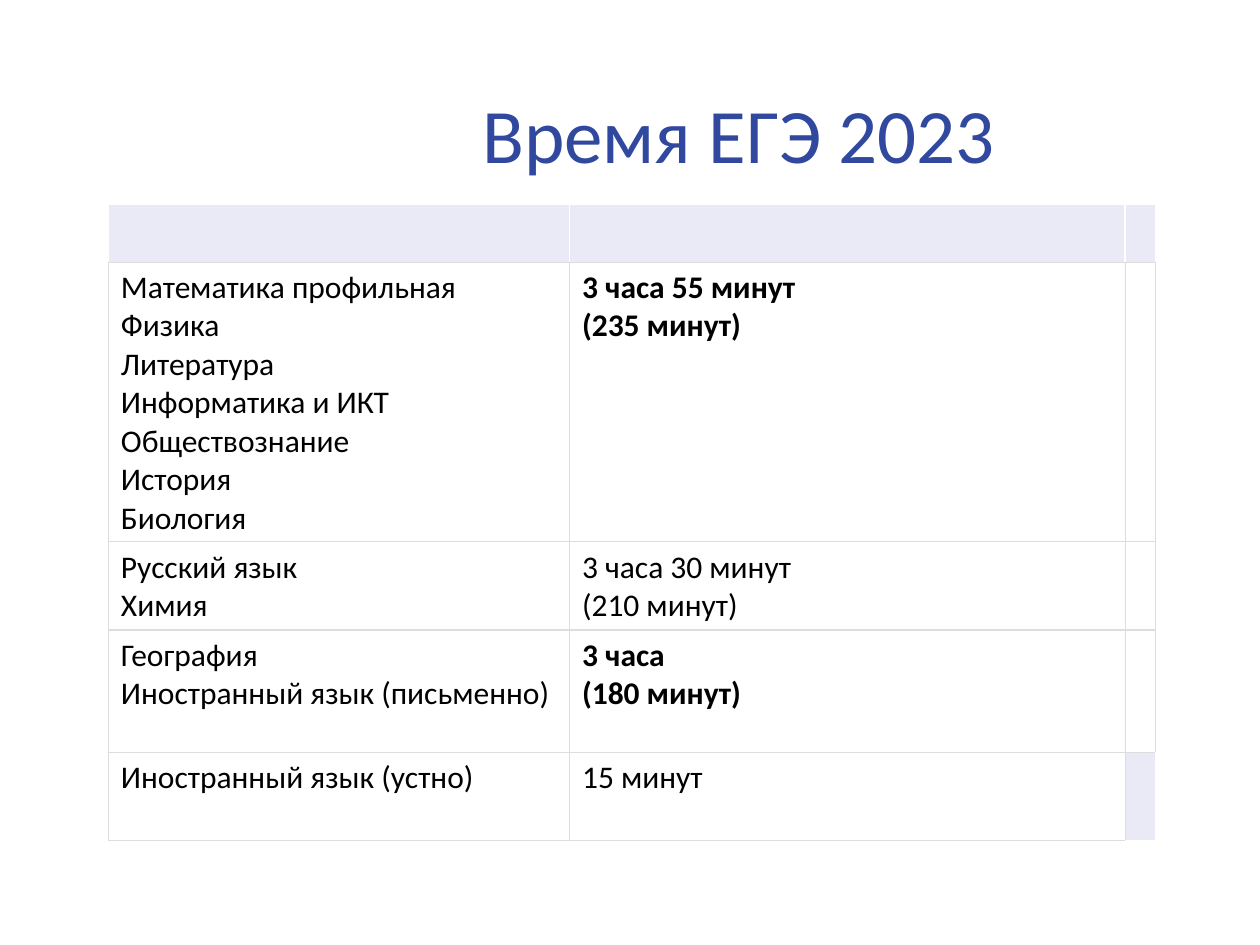
"""Build the slide with the exam durations table."""
from dataclasses import dataclass

from lxml import etree
from pptx import Presentation
from pptx.dml.color import RGBColor
from pptx.enum.text import MSO_ANCHOR, PP_ALIGN
from pptx.oxml.ns import qn
from pptx.util import Inches, Pt

MIDDLE, TOP = MSO_ANCHOR.MIDDLE, MSO_ANCHOR.TOP
CENTER, LEFT = PP_ALIGN.CENTER, PP_ALIGN.LEFT


@dataclass(frozen=True)
class Theme:
    font: str = "Calibri"
    title: str = "31489F"
    ink: str = "000000"
    paper: str = "FFFFFF"
    band: str = "E9EAF5"
    rule: str = "DDDDDD"
    title_size: int = 44
    body_size: int = 18
    rule_width: float = 0.75
    band_width: float = 0.96


THEME = Theme()


def write(frame, text, size=THEME.body_size, color=THEME.ink, bold=False, align=LEFT, anchor=TOP):
    frame.word_wrap = True
    frame.vertical_anchor = anchor
    paragraph = frame.paragraphs[0]
    paragraph.text = text.replace("\n", "\v")
    paragraph.alignment = align
    for run in paragraph.runs:
        run.font.name = THEME.font
        run.font.size = Pt(size)
        run.font.bold = bold
        run.font.color.rgb = RGBColor.from_string(color)


def style_cell(cell, fill, white_sides):
    properties = cell._tc.get_or_add_tcPr()
    for side in "LRTB":
        white = side in white_sides
        width = THEME.band_width if white else THEME.rule_width
        border = etree.SubElement(properties, qn(f"a:ln{side}"), w=str(Pt(width)))
        solid = etree.SubElement(border, qn("a:solidFill"))
        etree.SubElement(solid, qn("a:srgbClr"), val=THEME.paper if white else THEME.rule)
    cell.fill.solid()
    cell.fill.fore_color.rgb = RGBColor.from_string(fill)


column_widths = [3.66, 4.41, 0.21]
row_heights = [0.46, 2.22, 0.7, 0.97, 0.7]
durations = [
    ("", ""),
    (
        "Математика профильная\nФизика\nЛитература\nИнформатика и ИКТ\nОбществознание\nИстория\nБиология",
        "3 часа 55 минут\n(235 минут)",
    ),
    ("Русский язык\nХимия", "3 часа 30 минут\n(210 минут)"),
    ("География\nИностранный язык (письменно)", "3 часа\n(180 минут)"),
    ("Иностранный язык (устно)", "15 минут"),
]
bold_rows = {1, 3}
last_row, last_column = len(row_heights) - 1, len(column_widths) - 1

deck = Presentation()
deck.slide_width, deck.slide_height = Inches(10), Inches(7.5)
slide = deck.slides.add_slide(deck.slide_layouts[6])

heading = slide.shapes.add_textbox(Inches(1.85), Inches(0.25), Inches(8.03), Inches(1.61))
write(heading.text_frame, "Время ЕГЭ 2023", size=THEME.title_size, color=THEME.title,
      align=CENTER, anchor=MIDDLE)

schedule = slide.shapes.add_table(
    len(row_heights), len(column_widths), Inches(0.86), Inches(1.62),
    Inches(sum(column_widths)), Inches(sum(row_heights)),
).table
for column, width in zip(schedule.columns, column_widths):
    column.width = Inches(width)
for row, height in zip(schedule.rows, row_heights):
    row.height = Inches(height)

for row_index, row in enumerate(schedule.rows):
    for column_index, cell in enumerate(row.cells):
        if row_index == 0:
            style_cell(cell, THEME.band, "LRT")
        elif (row_index, column_index) == (last_row, last_column):
            style_cell(cell, THEME.band, "RB")
        else:
            style_cell(cell, THEME.paper, "")
    for cell, text in zip(row.cells, durations[row_index]):
        is_time = cell is not None and text == durations[row_index][1]
        write(cell.text_frame, text, bold=is_time and row_index in bold_rows)

deck.save("out.pptx")
